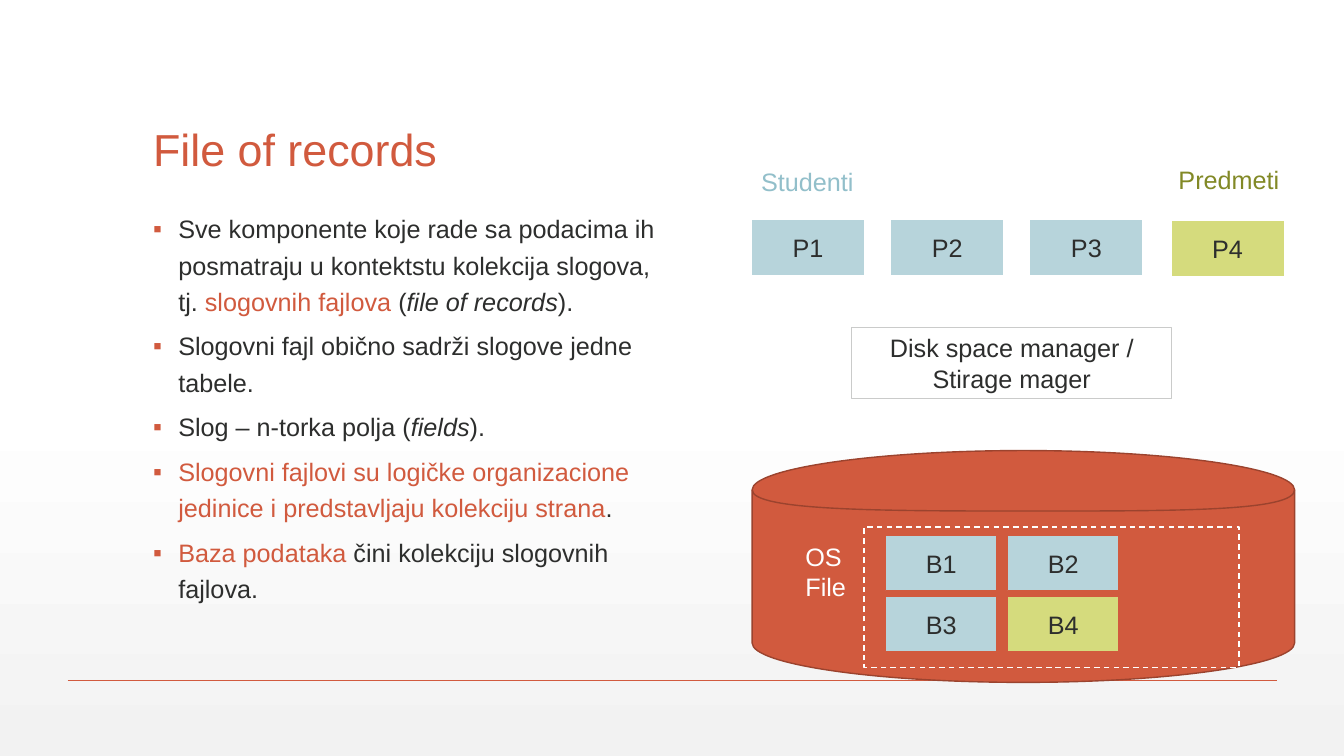
from copy import deepcopy

from lxml import etree
from pptx import Presentation
from pptx.dml.color import RGBColor
from pptx.enum.dml import MSO_LINE
from pptx.enum.shapes import MSO_CONNECTOR, MSO_SHAPE
from pptx.enum.text import MSO_ANCHOR, PP_ALIGN
from pptx.oxml.ns import qn
from pptx.util import Inches, Pt

RECT, PROCESS = MSO_SHAPE.RECTANGLE, MSO_SHAPE.FLOWCHART_PROCESS
STRAIGHT, DASH = MSO_CONNECTOR.STRAIGHT, MSO_LINE.DASH
TOP, MIDDLE, BOTTOM = MSO_ANCHOR.TOP, MSO_ANCHOR.MIDDLE, MSO_ANCHOR.BOTTOM
LEFT, CENTER = PP_ALIGN.LEFT, PP_ALIGN.CENTER

COLORS = {
    "red": "D15A3E", "rust": "9B432E", "ink": "2D2E2D", "white": "FFFFFF",
    "mist": "F2F2F2", "blue": "B7D4DB", "sky": "92BFCA", "lime": "D5DB7D",
    "olive": "828926", "gray": "CACBCA",
}
FONT = {"name": "Arial", "size": Pt(18)}
BULLET = {"line_spacing": 1.2, "space_before": Pt(6)}
BLOCK = (1.11, 0.55)

# Each bullet is a list of (text, color, italic) runs
POINTS = [
    [("Sve komponente koje rade sa podacima ih posmatraju u kontektstu "
      "kolekcija slogova, tj. ", "ink", False),
     ("slogovnih fajlova", "red", False), (" (", "ink", False),
     ("file of records", "ink", True), (").", "ink", False)],
    [("Slogovni fajl obično sadrži slogove jedne tabele.", "ink", False)],
    [("Slog – n-torka polja (", "ink", False), ("fields", "ink", True),
     (").", "ink", False)],
    [("Slogovni fajlovi su logičke organizacione jedinice i predstavljaju "
      "kolekciju strana", "red", False), (".", "ink", False)],
    [("Baza podataka", "red", False),
     (" čini kolekciju slogovnih fajlova.", "ink", False)],
]


def rgb(name):
    return RGBColor.from_string(COLORS[name])


def apply(target, values):
    for key, value in values.items():
        setattr(target, key, value)


def add_run(para, text, color, **extra):
    run = para.add_run()
    run.text = text
    apply(run.font, {**FONT, **extra})
    run.font.color.rgb = rgb(color)


def paint(shape, fill=None, line=None, width=1):
    shape.shadow.inherit = False
    if fill:
        shape.fill.solid()
        shape.fill.fore_color.rgb = rgb(fill)
    else:
        shape.fill.background()
    if line:
        shape.line.color.rgb = rgb(line)
        shape.line.width = Pt(width)
    else:
        shape.line.fill.background()


def add_label(slide, box, text, color, anchor=TOP, **extra):
    frame = slide.shapes.add_textbox(*map(Inches, box)).text_frame
    apply(frame, {"word_wrap": True, "vertical_anchor": anchor})
    add_run(frame.paragraphs[0], text, color, **extra)
    return frame.paragraphs[0]


def add_box(slide, kind, box, text="", fill=None, line=None, width=1):
    shape = slide.shapes.add_shape(kind, *map(Inches, box))
    paint(shape, fill, line, width)
    if text:
        apply(shape.text_frame, {"word_wrap": True, "vertical_anchor": MIDDLE})
        para = shape.text_frame.paragraphs[0]
        para.alignment = CENTER
        add_run(para, text, "ink")
    return shape


def add_back(slide):
    # Gradient from white down to pale gray
    fill = slide.background.fill
    fill.gradient()
    fill.gradient_angle = 270
    stops = fill._fill._gradFill.find(qn("a:gsLst"))
    stops.insert(1, deepcopy(stops[0]))
    for stop, (place, color) in zip(fill.gradient_stops, [
            (0, "white"), (0.53, "white"), (1, "mist")]):
        stop.position = place
        stop.color.rgb = rgb(color)
    # Footer rule
    rule = slide.shapes.add_connector(
        STRAIGHT, *map(Inches, (0.67, 6.75, 12.67, 6.75)))
    rule.line.color.rgb = rgb("red")
    rule.line.width = Pt(1)
    etree.SubElement(rule._element.spPr, qn("a:effectLst"))


def add_points(slide, box):
    frame = slide.shapes.add_textbox(*map(Inches, box)).text_frame
    frame.word_wrap = True
    for i, runs in enumerate(POINTS):
        para = frame.add_paragraph() if i else frame.paragraphs[0]
        apply(para, BULLET)
        props = para._p.get_or_add_pPr()
        props.set("marL", str(Inches(0.25)))
        props.set("indent", str(Inches(-0.25)))
        tint = etree.SubElement(props, qn("a:buClr"))
        etree.SubElement(tint, qn("a:srgbClr"), val=COLORS["red"])
        etree.SubElement(props, qn("a:buFont"), typeface="Arial")
        etree.SubElement(props, qn("a:buChar"), char="▪")
        for text, color, slant in runs:
            add_run(para, text, color, italic=slant)


def add_pages(slide, x, y):
    # Labels of the two record files
    add_label(slide, (x - 0.01, y - 0.58, 1.94, 0.4), "Studenti", "sky")
    add_label(slide, (x + 4.13, y - 0.6, 1.33, 0.4), "Predmeti", "olive")
    # Pages
    for i in range(3):
        add_box(slide, PROCESS, (x + i * 1.38, y, *BLOCK), f"P{i + 1}", "blue")
    add_box(slide, PROCESS, (x + 4.16, y + 0.01, *BLOCK), "P4", "lime")


def add_path(paths, size, steps, flags):
    """Add one outline; each step is a tag and its points in inches."""
    w, h = (str(Inches(n)) for n in size)
    outline = etree.SubElement(paths, qn("a:path"), w=w, h=h, **flags)
    for tag, *spots in steps:
        step = etree.SubElement(outline, qn(f"a:{tag}"))
        for x, y in spots:
            etree.SubElement(step, qn("a:pt"),
                             x=str(Inches(x)), y=str(Inches(y)))


def add_drum(slide, x, y, w, h):
    pen = slide.shapes.build_freeform(Inches(x), Inches(y))
    pen.add_line_segments([(Inches(x + w), Inches(y)),
                           (Inches(x + w), Inches(y + h))])
    drum = pen.convert_to_shape()
    paint(drum, "red", "rust")
    paths = drum._element.spPr.find(qn("a:custGeom")).find(qn("a:pathLst"))
    paths.clear()
    # Curved body and the front edge of its lid
    lid, bend, dip = 0.39, 0.18, 0.6
    mid, seam, near, far = w / 2, w / 2 + 0.1, w * 0.225, w * 0.775
    body = [
        ("moveTo", (0, lid)),
        ("cubicBezTo", (0, bend), (near, 0), (mid, 0)),
        ("cubicBezTo", (far, 0), (w, bend), (w, lid)),
        ("lnTo", (w, h - lid)),
        ("cubicBezTo", (w, h - bend), (far, h), (mid, h)),
        ("cubicBezTo", (near, h), (0, h - bend), (0, h - lid)),
        ("close",),
    ]
    edge = [
        ("moveTo", (w, lid)),
        ("cubicBezTo", (w, dip), (seam + 1.48, dip), (seam, dip)),
        ("cubicBezTo", (seam - 1.48, dip), (0, dip), (0, lid)),
    ]
    for steps, flags in [(body, {"stroke": "0"}), (edge, {"fill": "none"}),
                         (body, {"fill": "none"})]:
        add_path(paths, (w, h), steps, flags)


def add_disk(slide, x, y, w, h):
    add_drum(slide, x, y, w, h)
    # Blocks in a two by two grid
    for i in range(4):
        row, col = divmod(i, 2)
        add_box(slide, PROCESS,
                (x + 1.32 + col * 1.21, y + 0.84 + row * 0.61, *BLOCK),
                f"B{i + 1}", "lime" if i == 3 else "blue", "red")
    # Outline and name of the system file
    file = add_box(slide, RECT, (x + 1.11, y + 0.76, 3.72, 1.39), line="white")
    file.line.dash_style = DASH
    add_label(slide, (x + 0.43, y + 0.85, 0.97, 0.71), "OS File", "white")


def main():
    deck = Presentation()
    apply(deck, {"slide_width": Inches(13.33), "slide_height": Inches(7.5)})
    slide = deck.slides.add_slide(deck.slide_layouts[6])
    add_back(slide)
    title = add_label(slide, (1.42, 0.55, 10.5, 1.25), "File of records",
                      "red", BOTTOM, size=Pt(32))
    apply(title, {"line_spacing": 0.9, "alignment": LEFT})
    add_points(slide, (1.42, 2.01, 5.25, 4.76))
    add_disk(slide, 7.46, 4.47, 5.38, 2.3)
    add_pages(slide, 7.46, 2.18)
    add_box(slide, RECT, (8.45, 3.25, 3.17, 0.7),
            "Disk space manager / Stirage mager", line="gray", width=0.75)
    deck.save("out.pptx")


if __name__ == "__main__":
    main()
